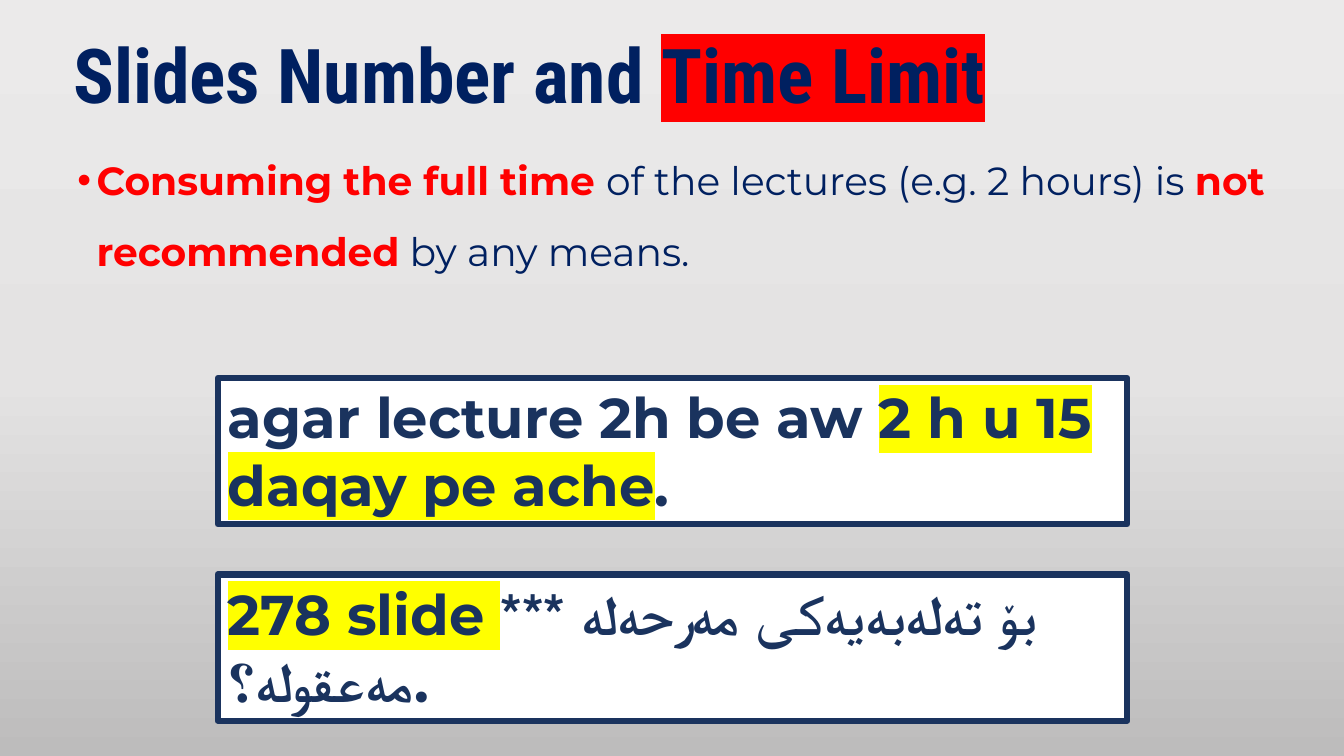
"""Build the slide about slide count and lecture time limit."""
from pptx import Presentation
from pptx.dml.color import RGBColor
from pptx.enum.shapes import MSO_SHAPE
from pptx.enum.text import MSO_ANCHOR, MSO_AUTO_SIZE, PP_ALIGN
from pptx.oxml import parse_xml
from pptx.oxml.ns import nsdecls
from pptx.util import Inches, Pt

NAVY, RED, YELLOW, WHITE = "002060", "FF0000", "FFFF00", "FFFFFF"
BOX_BLUE = "1A335E"
HEADING_FONT, BODY_FONT = "Roboto Condensed", "Montserrat"


def rgb(value):
    return RGBColor.from_string(value)


def add_run(paragraph, text, font_name, size, color, bold=True, highlight=None):
    run = paragraph.add_run()
    run.text = text
    font = run.font
    font.name, font.size, font.bold = font_name, Pt(size), bold
    font.color.rgb = rgb(color)
    if highlight:
        properties = run._r.get_or_add_rPr()
        properties.find("{*}solidFill").addnext(parse_xml(
            f'<a:highlight {nsdecls("a")}><a:srgbClr val="{highlight}"/></a:highlight>'))


presentation = Presentation()
presentation.slide_width = Inches(13.33)
presentation.slide_height = Inches(7.5)
slide = presentation.slides.add_slide(presentation.slide_layouts[6])

background = slide.background.fill
background.gradient()
background.gradient_angle = 270
stops = background._fill._gradFill.find("{*}gsLst")
for stop in list(stops):
    stops.remove(stop)
for percent, color in ((0, "EBEAEA"), (50, "E4E3E3"), (100, "BDBCBC")):
    stops.append(parse_xml(
        f'<a:gs {nsdecls("a")} pos="{percent * 1000}"><a:srgbClr val="{color}"/></a:gs>'))

title = slide.shapes.add_textbox(Inches(0.63), Inches(0.15), Inches(12.7), Inches(1.09))
title.text_frame.word_wrap = True
title.text_frame.vertical_anchor = MSO_ANCHOR.BOTTOM
paragraph = title.text_frame.paragraphs[0]
paragraph.line_spacing = 0.9
add_run(paragraph, "Slides Number and ", HEADING_FONT, 54, NAVY)
add_run(paragraph, "Time Limit", HEADING_FONT, 54, NAVY, highlight=RED)

body = slide.shapes.add_textbox(Inches(0.67), Inches(1.27), Inches(12.24), Inches(6.08))
body.text_frame.word_wrap = True
paragraph = body.text_frame.paragraphs[0]
paragraph.line_spacing = 1.5
properties = paragraph._p.get_or_add_pPr()
properties.set("marL", str(Inches(0.19)))
properties.set("indent", str(Inches(-0.19)))
properties.append(parse_xml(f'<a:buFont {nsdecls("a")} typeface="Arial"/>'))
properties.append(parse_xml(f'<a:buChar {nsdecls("a")} char="•"/>'))
for text, color, bold in (
    ("Consuming the full time ", RED, True),
    ("of the lectures (e.g. 2 hours) is ", NAVY, False),
    ("not recommended", RED, True),
    (" by any means.", NAVY, False),
):
    add_run(paragraph, text, BODY_FONT, 28, color, bold)

remarks = (
    (5.7, (("278 slide ", YELLOW), ("بۆ تەلەبەیەکی مەرحەلە *** مەعقولە؟.", None))),
    (3.75, (("agar lecture 2h be aw ", None), ("2 h u 15 daqay pe ache", YELLOW), (".", None))),
)
for top, runs in remarks:
    box = slide.shapes.add_shape(
        MSO_SHAPE.RECTANGLE, Inches(2.16), Inches(top), Inches(9.02), Inches(1.45))
    box.shadow.inherit = False
    box.fill.solid()
    box.fill.fore_color.rgb = rgb(WHITE)
    box.line.color.rgb = rgb(BOX_BLUE)
    box.line.width = Pt(4.5)
    box.line._ln.append(parse_xml(f'<a:round {nsdecls("a")}/>'))
    frame = box.text_frame
    frame.word_wrap = True
    frame.auto_size = MSO_AUTO_SIZE.SHAPE_TO_FIT_TEXT
    frame.vertical_anchor = MSO_ANCHOR.TOP
    paragraph = frame.paragraphs[0]
    paragraph.alignment = PP_ALIGN.LEFT
    for text, highlight in runs:
        add_run(paragraph, text, BODY_FONT, 40, BOX_BLUE, highlight=highlight)

presentation.save("out.pptx")
